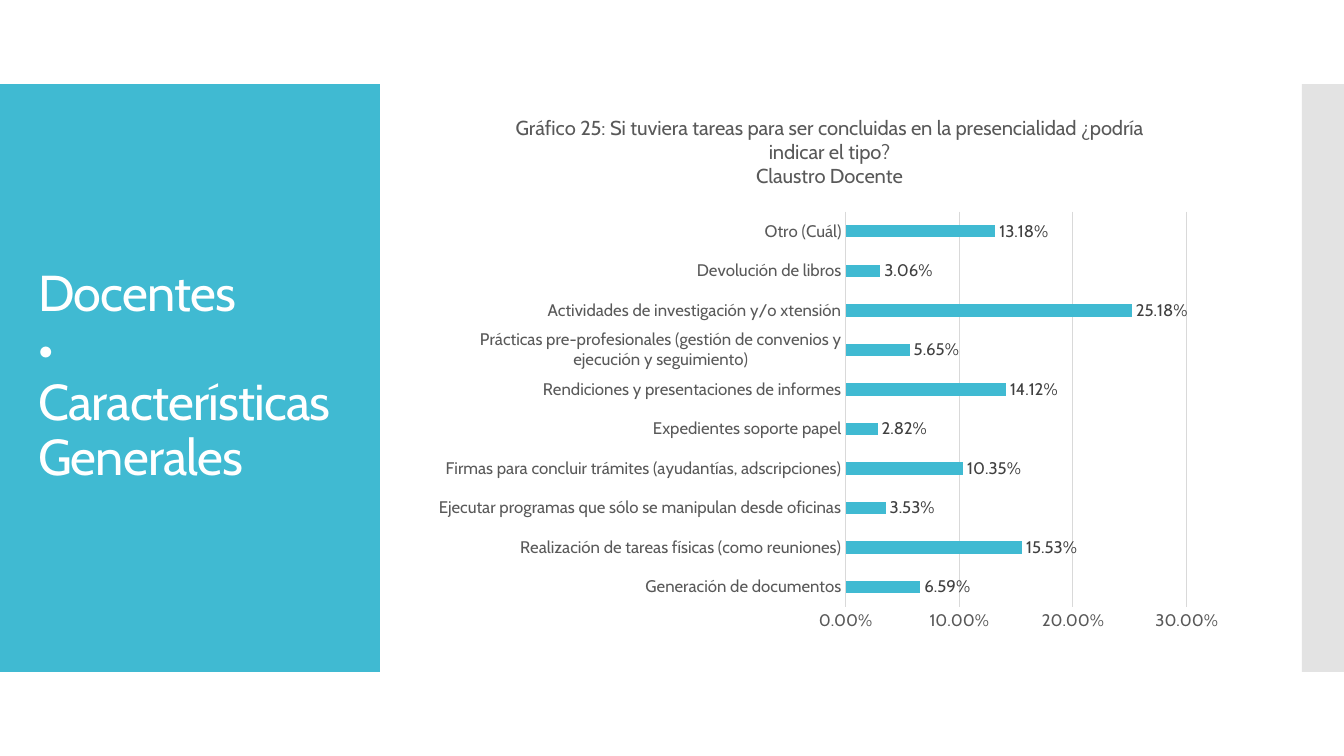
from lxml import etree
from pptx import Presentation
from pptx import util as u
from pptx.chart.data import CategoryChartData
from pptx.dml.color import RGBColor
from pptx.enum import chart as charts, shapes, text
from pptx.oxml import ns

FONT = "Cabin"
TEAL, SILVER, WHITE = "40BAD2", "C8C8C8", "FFFFFF"
AXIS_TEXT, LABEL_TEXT, GRID = "595959", "404040", "D9D9D9"
PERCENT = "0.00%"

TITLE = "Docentes\v•\vCaracterísticas Generales"
CHART_TITLE = [
    "Gráfico 25: Si tuviera tareas para ser concluidas en la presencialidad ¿podría indicar el tipo?",
    "Claustro Docente",
]
TASKS = [
    ("Generación de documentos", 0.0659),
    ("Realización de tareas físicas (como reuniones)", 0.1553),
    ("Ejecutar programas que sólo se manipulan desde oficinas", 0.0353),
    ("Firmas para concluir trámites (ayudantías, adscripciones)", 0.1035),
    ("Expedientes soporte papel", 0.0282),
    ("Rendiciones y presentaciones de informes", 0.1412),
    ("Prácticas pre-profesionales (gestión de convenios y ejecución y seguimiento)", 0.0565),
    ("Actividades de investigación y/o xtensión", 0.2518),
    ("Devolución de libros", 0.0306),
    ("Otro (Cuál)", 0.1318),
]

# Left, top, width and height in points
SLIDE_WIDTH, SLIDE_HEIGHT = 960, 540
BAND_TOP, BAND_HEIGHT = 60, 420
PANEL_WIDTH, STRIP_WIDTH = 271.3, 30
TITLE_BOX = (20, 88.5, 232, 362)
CHART_BOX = (304.5, 67.7, 576, 403.2)
PLOT_AREA = {"x": 0.52, "y": 0.207, "w": 0.423, "h": 0.7}


def rgb(color):
    return RGBColor.from_string(color)


def points(box):
    return [u.Pt(value) for value in box]


def format_font(font, size=12, color=AXIS_TEXT):
    font.name, font.size, font.bold = FONT, u.Pt(size), False
    font.color.rgb = rgb(color)


def write(frame, paragraphs, size, color, align, line_spacing=None, tracking=None):
    """Fill a text frame; a vertical tab in the text is a line break."""
    for index, content in enumerate(paragraphs):
        paragraph = frame.paragraphs[0] if index == 0 else frame.add_paragraph()
        paragraph.text = content
        paragraph.alignment = align
        if line_spacing:
            paragraph.line_spacing = line_spacing
        for run in paragraph.runs:
            format_font(run.font, size, color)
            if tracking:
                run.font._element.set("spc", str(round(tracking * 100)))


def add_band(slide, left, width, color, opacity=None):
    band = slide.shapes.add_shape(
        shapes.MSO_SHAPE.RECTANGLE, *points((left, BAND_TOP, width, BAND_HEIGHT)))
    band.shadow.inherit = False
    band.fill.solid()
    band.fill.fore_color.rgb = rgb(color)
    band.line.fill.background()
    if opacity is not None:
        fill_color = band._element.spPr.find(".//" + ns.qn("a:srgbClr"))
        etree.SubElement(fill_color, ns.qn("a:alpha"), val=str(opacity * 1000))


def add_title(slide):
    title = slide.shapes.title
    title.left, title.top, title.width, title.height = points(TITLE_BOX)
    frame = title.text_frame
    frame.word_wrap = True
    frame.auto_size = text.MSO_AUTO_SIZE.NONE
    frame.vertical_anchor = text.MSO_ANCHOR.MIDDLE
    write(frame, [TITLE], 36, WHITE, text.PP_ALIGN.LEFT, line_spacing=0.9, tracking=-0.6)
    # Draw the title above the bands
    slide.shapes._spTree.append(title._element)


def fix_plot_area(chart):
    plot_area = chart._chartSpace.chart.plotArea
    for old_layout in plot_area.findall(ns.qn("c:layout")):
        plot_area.remove(old_layout)
    layout = etree.Element(ns.qn("c:layout"))
    manual = etree.SubElement(layout, ns.qn("c:manualLayout"))
    settings = {"layoutTarget": "inner", "xMode": "edge", "yMode": "edge", **PLOT_AREA}
    for name, value in settings.items():
        etree.SubElement(manual, ns.qn("c:" + name), val=str(value))
    plot_area.insert(0, layout)


def add_task_chart(slide):
    data = CategoryChartData(number_format=PERCENT)
    data.categories = [task for task, share in TASKS]
    data.add_series("Series 1", [share for task, share in TASKS])
    chart = slide.shapes.add_chart(
        charts.XL_CHART_TYPE.BAR_CLUSTERED, *points(CHART_BOX), data).chart
    format_font(chart.font)
    chart.has_legend = False
    chart.has_title = True
    write(chart.chart_title.text_frame, CHART_TITLE, 14.4, AXIS_TEXT, text.PP_ALIGN.CENTER)
    chart.chart_title.include_in_layout = False
    fix_plot_area(chart)

    plot = chart.plots[0]
    plot.gap_width, plot.vary_by_categories = 219, False
    series = plot.series[0]
    series.format.fill.solid()
    series.format.fill.fore_color.rgb = rgb(TEAL)
    labels = series.data_labels
    labels.show_value = True
    labels.number_format, labels.number_format_is_linked = PERCENT, False
    labels.position = charts.XL_LABEL_POSITION.OUTSIDE_END
    format_font(labels.font, color=LABEL_TEXT)

    category_axis, value_axis = chart.category_axis, chart.value_axis
    for axis in (category_axis, value_axis):
        axis.major_tick_mark = axis.minor_tick_mark = charts.XL_TICK_MARK.NONE
        format_font(axis.tick_labels.font)
    value_axis.minimum_scale, value_axis.maximum_scale, value_axis.major_unit = 0, 0.3, 0.1
    value_axis.tick_labels.number_format = PERCENT
    value_axis.tick_labels.number_format_is_linked = False
    value_axis.format.line.fill.background()
    value_axis.has_major_gridlines = True
    for line in (category_axis.format.line, value_axis.major_gridlines.format.line):
        line.color.rgb = rgb(GRID)
        line.width = u.Pt(0.75)


def main():
    presentation = Presentation()
    presentation.slide_width, presentation.slide_height = points((SLIDE_WIDTH, SLIDE_HEIGHT))
    slide = presentation.slides.add_slide(presentation.slide_layouts.get_by_name("Title Only"))
    add_band(slide, 0, PANEL_WIDTH, TEAL)
    add_band(slide, SLIDE_WIDTH - STRIP_WIDTH, STRIP_WIDTH, SILVER, opacity=50)
    add_title(slide)
    add_task_chart(slide)
    presentation.save("out.pptx")


if __name__ == "__main__":
    main()
